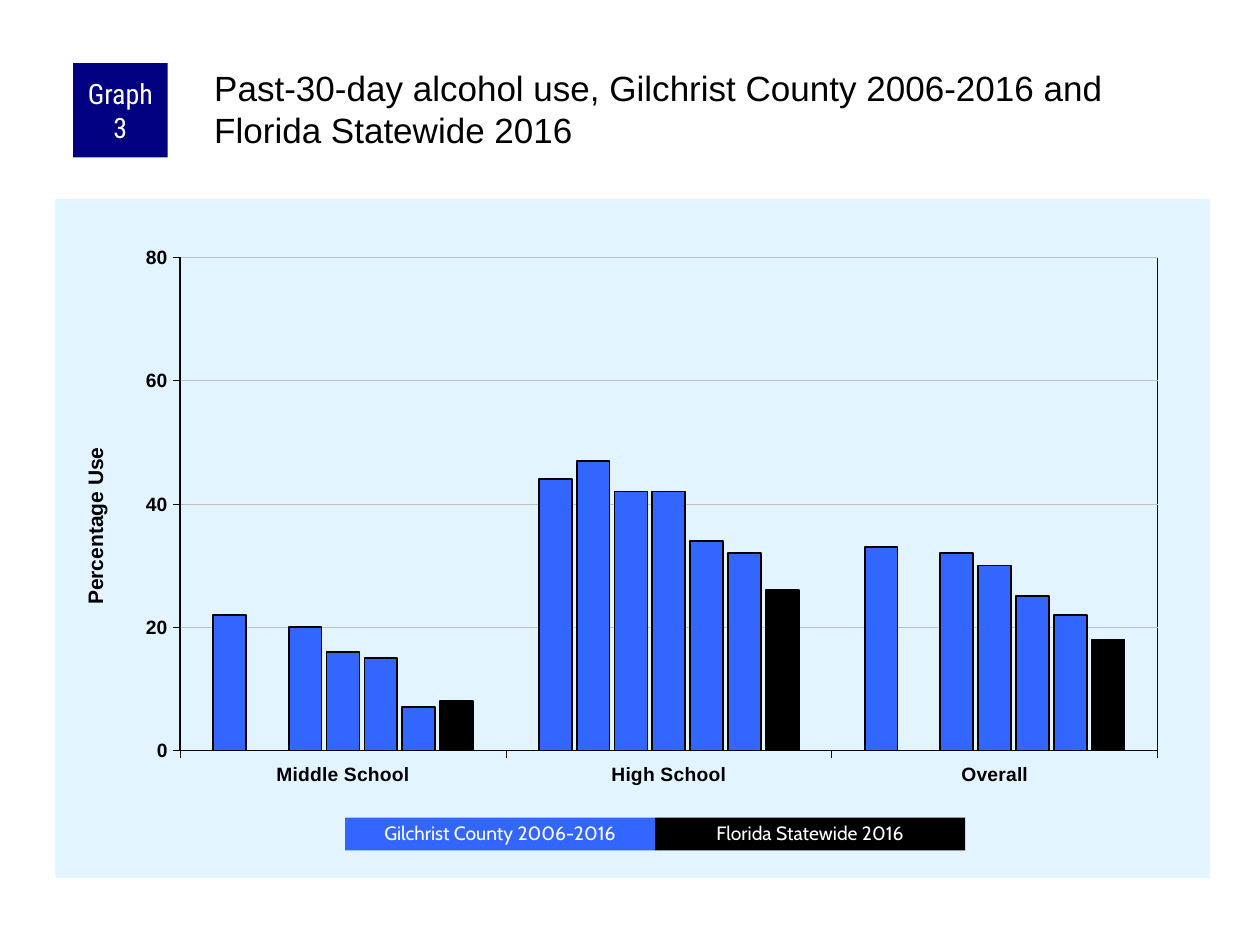
from lxml import etree
from pptx import Presentation, util as u
from pptx.chart import data as cd
from pptx.dml.color import RGBColor
from pptx.enum import chart as ch, shapes, text
from pptx.oxml import parse_xml
from pptx.oxml.ns import nsdecls, qn

THEME = {
    "navy": "000080", "blue": "3366FF", "black": "000000", "white": "FFFFFF",
    "panel": "E1F4FF", "grid": "C0C0C0",
    "title": 20, "badge": 16, "axis_title": 12, "label": 11, "chart": 8,
}


def style_font(font, size, color, name="Arial", bold=False):
    for key, value in {"size": u.Pt(THEME[size]), "name": name, "bold": bold}.items():
        setattr(font, key, value)
    font.color.rgb = RGBColor.from_string(THEME[color])


def add_label(left, top, width, height, words, fill, size, face, spacing):
    sp = s.shapes.add_shape(shapes.MSO_SHAPE.RECTANGLE, u.Inches(left), u.Inches(top),
                            u.Inches(width), u.Inches(height))
    sp.shadow.inherit = False
    sp.fill.solid()
    sp.fill.fore_color.rgb = RGBColor.from_string(THEME[fill])
    sp.line.fill.background()
    tf = sp.text_frame
    frame = {"word_wrap": True, "vertical_anchor": text.MSO_ANCHOR.MIDDLE,
             "margin_left": u.Inches(0.05), "margin_right": u.Inches(0.05),
             "margin_top": 0, "margin_bottom": 0}
    for key, value in frame.items():
        setattr(tf, key, value)
    p = tf.paragraphs[0]
    p.alignment = text.PP_ALIGN.CENTER
    p.line_spacing = spacing
    r = p.add_run()
    r.text = words
    style_font(r.font, size, "white", face)


prs = Presentation()
prs.slide_width, prs.slide_height = u.Inches(10), u.Inches(7.5)
s = prs.slides.add_slide(prs.slide_layouts[5])

# Title
title = s.shapes.title
for key, value in {"left": 1.67, "top": 0.5, "width": 7.92, "height": 0.83}.items():
    setattr(title, key, u.Inches(value))
tf = title.text_frame
frame = {"word_wrap": True, "auto_size": text.MSO_AUTO_SIZE.NONE,
         "vertical_anchor": text.MSO_ANCHOR.TOP,
         "margin_left": u.Inches(0.03), "margin_top": u.Inches(0.03),
         "margin_right": 0, "margin_bottom": 0}
for key, value in frame.items():
    setattr(tf, key, value)
p = tf.paragraphs[0]
p.alignment = text.PP_ALIGN.LEFT
r = p.add_run()
r.text = "Past-30-day alcohol use, Gilchrist County 2006-2016 and Florida Statewide 2016"
style_font(r.font, "title", "black")

# Chart data: six county surveys, then the state
data = cd.CategoryChartData()
data.categories = ["Middle School", "High School", "Overall"]
usage = [(22, 44, 33), (0, 47, 0), (20, 42, 32), (16, 42, 30),
         (15, 34, 25), (7, 32, 22), (8, 26, 18)]
for number, values in enumerate(usage, 1):
    data.add_series(f"Series {number}", [v or None for v in values])
chart = s.shapes.add_chart(ch.XL_CHART_TYPE.COLUMN_CLUSTERED, u.Inches(0.44), u.Inches(1.58),
                           u.Inches(9.16), u.Inches(5.39), data).chart
chart.has_legend = chart.has_title = False
style_font(chart.font, "chart", "black")

# Columns
plot = chart.plots[0]
plot.gap_width, plot.overlap, plot.vary_by_categories = 200, -15, False
for series in plot.series:
    state = series.name == f"Series {len(usage)}"
    series.invert_if_negative = False
    series.format.fill.solid()
    series.format.fill.fore_color.rgb = RGBColor.from_string(THEME["black" if state else "blue"])
    series.format.line.color.rgb = RGBColor.from_string(THEME["black"])
    series.format.line.width = u.Pt(1)

# Axes
val = chart.value_axis
for key, value in {"minimum_scale": 0, "maximum_scale": 80, "major_unit": 20,
                   "has_major_gridlines": True}.items():
    setattr(val, key, value)
for axis in (chart.category_axis, val):
    axis.major_tick_mark = ch.XL_TICK_MARK.OUTSIDE
    axis.minor_tick_mark = ch.XL_TICK_MARK.NONE
    style_font(axis.tick_labels.font, "label", "black", bold=True)
for line, color in ((chart.category_axis.format.line, "black"), (val.format.line, "black"),
                    (val.major_gridlines.format.line, "grid")):
    line.color.rgb = RGBColor.from_string(THEME[color])
    line.width = u.Pt(0.25)
tf = val.axis_title.text_frame
tf.text = "Percentage Use"
style_font(tf.paragraphs[0].runs[0].font, "axis_title", "black", bold=True)
body = val.axis_title._element.find(".//" + qn("a:bodyPr"))
body.set("rot", "-5400000")
body.set("vert", "horz")

# Fixed places for the plot area and the axis title
plot_area = chart._chartSpace.chart.plotArea
places = [(plot_area, {"x": 0.108, "y": 0.086, "w": 0.847, "h": 0.726}),
          (val.axis_title._element, {"x": 0.02, "y": 0.36})]
for owner, place in places:
    for old in owner.findall(qn("c:layout")):
        owner.remove(old)
    layout = etree.Element(qn("c:layout"))
    manual = etree.SubElement(layout, qn("c:manualLayout"))
    if "w" in place:
        etree.SubElement(manual, qn("c:layoutTarget")).set("val", "inner")
    for key in ("x", "y"):
        etree.SubElement(manual, qn(f"c:{key}Mode")).set("val", "edge")
    for key, value in place.items():
        etree.SubElement(manual, qn(f"c:{key}")).set("val", str(value))
    text_part = owner.find(qn("c:tx"))
    owner.insert(0 if text_part is None else owner.index(text_part) + 1, layout)

# Plot frame and chart background
plot_area.append(parse_xml(
    f'<c:spPr {nsdecls("c", "a")}><a:noFill/><a:ln w="12700"><a:solidFill>'
    f'<a:srgbClr val="{THEME["navy"]}"/></a:solidFill></a:ln></c:spPr>'))
chart._chartSpace.chart.addnext(parse_xml(
    f'<c:spPr {nsdecls("c", "a")}><a:solidFill><a:srgbClr val="{THEME["panel"]}"/>'
    '</a:solidFill><a:ln><a:noFill/></a:ln></c:spPr>'))

# Graph number
add_label(0.58, 0.5, 0.75, 0.75, "Graph 3", "navy", "badge", "Roboto Condensed", 1.0)

# Legend
legend = [("Gilchrist County 2006-2016", "blue"), ("Florida Statewide 2016", "black")]
for i, (words, fill) in enumerate(legend):
    add_label(2.74 + 2.46 * i, 6.49, 2.46, 0.26, words, fill, "label", "Cabin", 0.9)

prs.save("out.pptx")
